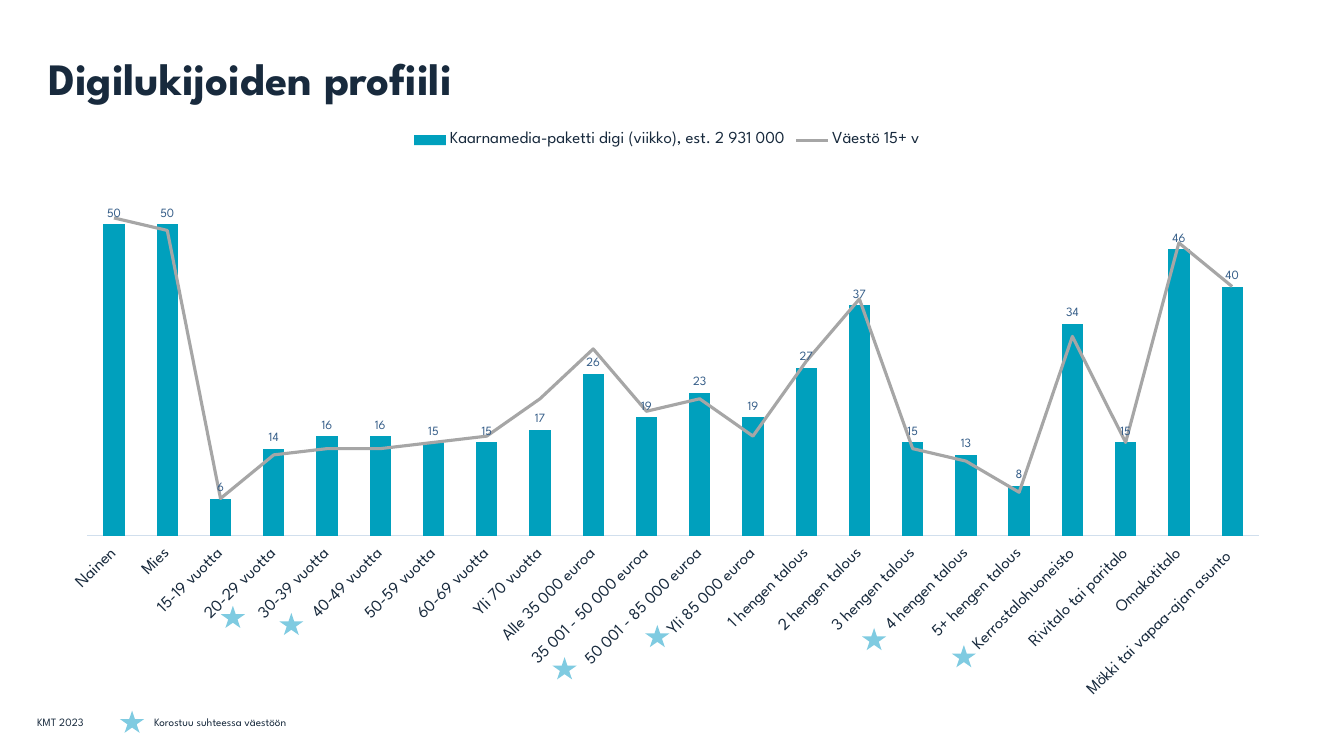
from copy import deepcopy

from lxml import etree
from pptx import Presentation
from pptx.chart.data import CategoryChartData
from pptx.dml.color import RGBColor
from pptx.enum.chart import (XL_CHART_TYPE, XL_LABEL_POSITION, XL_LEGEND_POSITION,
                             XL_MARKER_STYLE, XL_TICK_LABEL_POSITION, XL_TICK_MARK)
from pptx.enum.shapes import MSO_SHAPE
from pptx.enum.text import MSO_ANCHOR, PP_ALIGN
from pptx.oxml import parse_xml
from pptx.oxml.ns import nsdecls, qn
from pptx.util import Inches, Pt

COLUMNS = XL_CHART_TYPE.COLUMN_CLUSTERED
LABEL_ABOVE = XL_LABEL_POSITION.OUTSIDE_END
LEGEND_TOP = XL_LEGEND_POSITION.TOP
NO_MARKER = XL_MARKER_STYLE.NONE
NO_TICK = XL_TICK_MARK.NONE
LABELS_LOW = XL_TICK_LABEL_POSITION.LOW
STAR = MSO_SHAPE.STAR_5_POINT
TOP = MSO_ANCHOR.TOP
MIDDLE = MSO_ANCHOR.MIDDLE
LEFT = PP_ALIGN.LEFT

FONT = "League Spartan"
NAVY = "182A3D"
TEAL = "00A0BD"
GREY = "A6A6A6"
LABEL_BLUE = "365E89"
AXIS_BLUE = "D1DFED"
STAR_BLUE = "7FCBE1"

# Category, digital readers (%), population (%)
PROFILE = [
    ("Nainen", 50, 51), ("Mies", 50, 49),
    ("15-19 vuotta", 6, 6), ("20-29 vuotta", 14, 13), ("30-39 vuotta", 16, 14),
    ("40-49 vuotta", 16, 14), ("50-59 vuotta", 15, 15), ("60-69 vuotta", 15, 16),
    ("Yli 70 vuotta", 17, 22),
    ("Alle 35 000 euroa", 26, 30), ("35 001 - 50 000 euroa", 19, 20),
    ("50 001 - 85 000 euroa", 23, 22), ("Yli 85 000 euroa", 19, 16),
    ("1 hengen talous", 27, 28), ("2 hengen talous", 37, 38),
    ("3 hengen talous", 15, 14), ("4 hengen talous", 13, 12),
    ("5+ hengen talous", 8, 7),
    ("Kerrostalohuoneisto", 34, 32), ("Rivitalo tai paritalo", 15, 15),
    ("Omakotitalo", 46, 47), ("Mökki tai vapaa-ajan asunto ", 40, 40),
]

# Left and top of each star; the first belongs to the key
STARS = [(1.19, 7.05), (2.77, 6.08), (2.19, 6.01), (5.48, 6.52),
         (6.4, 6.2), (8.55, 6.23), (9.44, 6.4)]


def color(value):
    return RGBColor.from_string(value)


def style_font(font, size, value=NAVY, bold=False):
    font.name = FONT
    font.size = Pt(size)
    font.bold = bold
    font.color.rgb = color(value)


def place(shape, left, top, width, height):
    shape.left, shape.top = Inches(left), Inches(top)
    shape.width, shape.height = Inches(width), Inches(height)


def add_title(slide, text):
    title = slide.shapes.title
    place(title, 0.48, 0.5, 12.36, 0.81)
    frame = title.text_frame
    frame.margin_left = frame.margin_right = 0
    frame.margin_top = frame.margin_bottom = 0
    frame.vertical_anchor = TOP
    paragraph = frame.paragraphs[0]
    paragraph.alignment = LEFT
    run = paragraph.add_run()
    run.text = text
    style_font(run.font, 32, bold=True)


def add_note(slide, text, left, top, width, height, anchor):
    box = slide.shapes.add_textbox(Inches(left), Inches(top), Inches(width), Inches(height))
    frame = box.text_frame
    frame.word_wrap = True
    frame.vertical_anchor = anchor
    run = frame.paragraphs[0].add_run()
    run.text = text
    style_font(run.font, 8)


def add_star(slide, left, top):
    star = slide.shapes.add_shape(STAR, Inches(left), Inches(top), Inches(0.24), Inches(0.22))
    star.shadow.inherit = False
    star.fill.solid()
    star.fill.fore_color.rgb = color(STAR_BLUE)
    star.line.fill.background()


def move_last_series_to_line(chart):
    """Draw the last column series as a line on the same axes."""
    bar_chart = chart.element.find(".//" + qn("c:barChart"))
    series = bar_chart.findall(qn("c:ser"))[-1]
    for bar_setting in series.findall(qn("c:invertIfNegative")):
        series.remove(bar_setting)
    line_chart = parse_xml(
        f'<c:lineChart {nsdecls("c")}><c:grouping val="standard"/>'
        '<c:varyColors val="0"/></c:lineChart>')
    line_chart.append(series)
    etree.SubElement(line_chart, qn("c:marker")).set("val", "1")
    for axis_id in bar_chart.findall(qn("c:axId")):
        line_chart.append(deepcopy(axis_id))
    bar_chart.addnext(line_chart)


def set_plot_area(chart, left, top, width, height):
    """Fix the inner plot area, in fractions of the chart."""
    plot_area = chart.element.find(".//" + qn("c:plotArea"))
    for layout in plot_area.findall(qn("c:layout")):
        plot_area.remove(layout)
    sizes = "".join(f'<c:{name} val="{value}"/>' for name, value in
                    (("x", left), ("y", top), ("w", width), ("h", height)))
    plot_area.insert(0, parse_xml(
        f'<c:layout {nsdecls("c")}><c:manualLayout><c:layoutTarget val="inner"/>'
        f'<c:xMode val="edge"/><c:yMode val="edge"/>{sizes}</c:manualLayout></c:layout>'))


def style_axes(chart):
    category_axis = chart.category_axis
    category_axis.major_tick_mark = category_axis.minor_tick_mark = NO_TICK
    category_axis.tick_label_position = LABELS_LOW
    category_axis.format.line.color.rgb = color(AXIS_BLUE)
    category_axis.format.line.width = Pt(0.75)
    style_font(category_axis.tick_labels.font, 12)
    body = chart.element.find(f".//{qn('c:catAx')}/{qn('c:txPr')}/{qn('a:bodyPr')}")
    body.set("rot", "-2700000")
    body.set("vert", "horz")
    value_axis = chart.value_axis
    value_axis.minimum_scale, value_axis.maximum_scale = 0, 60
    value_axis.has_major_gridlines = False
    value_axis.visible = False


def add_profile_chart(slide):
    categories, readers, population = zip(*PROFILE)
    data = CategoryChartData()
    data.categories = categories
    data.add_series("Kaarnamedia-paketti digi (viikko), est. 2 931 000", readers)
    data.add_series("Väestö 15+ v", population)
    chart = slide.shapes.add_chart(COLUMNS, Inches(0.5), Inches(1.2), Inches(12.23),
                                   Inches(5.8), data).chart
    chart.has_title = False
    style_font(chart.font, 10)
    chart.has_legend = True
    chart.legend.position = LEGEND_TOP
    chart.legend.include_in_layout = False
    style_font(chart.legend.font, 12)
    style_axes(chart)
    move_last_series_to_line(chart)
    set_plot_area(chart, 0.03, 0.07, 0.95, 0.64)

    # Columns with values above
    columns, lines = chart.plots
    columns.gap_width = 150
    columns.vary_by_categories = False
    bars = columns.series[0]
    bars.format.fill.solid()
    bars.format.fill.fore_color.rgb = color(TEAL)
    labels = bars.data_labels
    labels.show_value = True
    labels.position = LABEL_ABOVE
    style_font(labels.font, 9, LABEL_BLUE)

    # Population line
    line = lines.series[0]
    line.smooth = False
    line.marker.style = NO_MARKER
    line.format.line.color.rgb = color(GREY)
    line.format.line.width = Pt(2.25)


def main():
    presentation = Presentation()
    presentation.slide_width = Inches(13.33)
    presentation.slide_height = Inches(7.5)
    slide = presentation.slides.add_slide(presentation.slide_layouts[5])

    add_title(slide, "Digilukijoiden profiili")
    add_profile_chart(slide)

    # Source and key
    add_note(slide, "KMT 2023", 0.27, 6.96, 1.05, 0.4, MIDDLE)
    add_note(slide, "Korostuu suhteessa väestöön", 1.43, 7.05, 2.2, 0.24, TOP)
    for left, top in STARS:
        add_star(slide, left, top)

    presentation.save("out.pptx")


if __name__ == "__main__":
    main()
